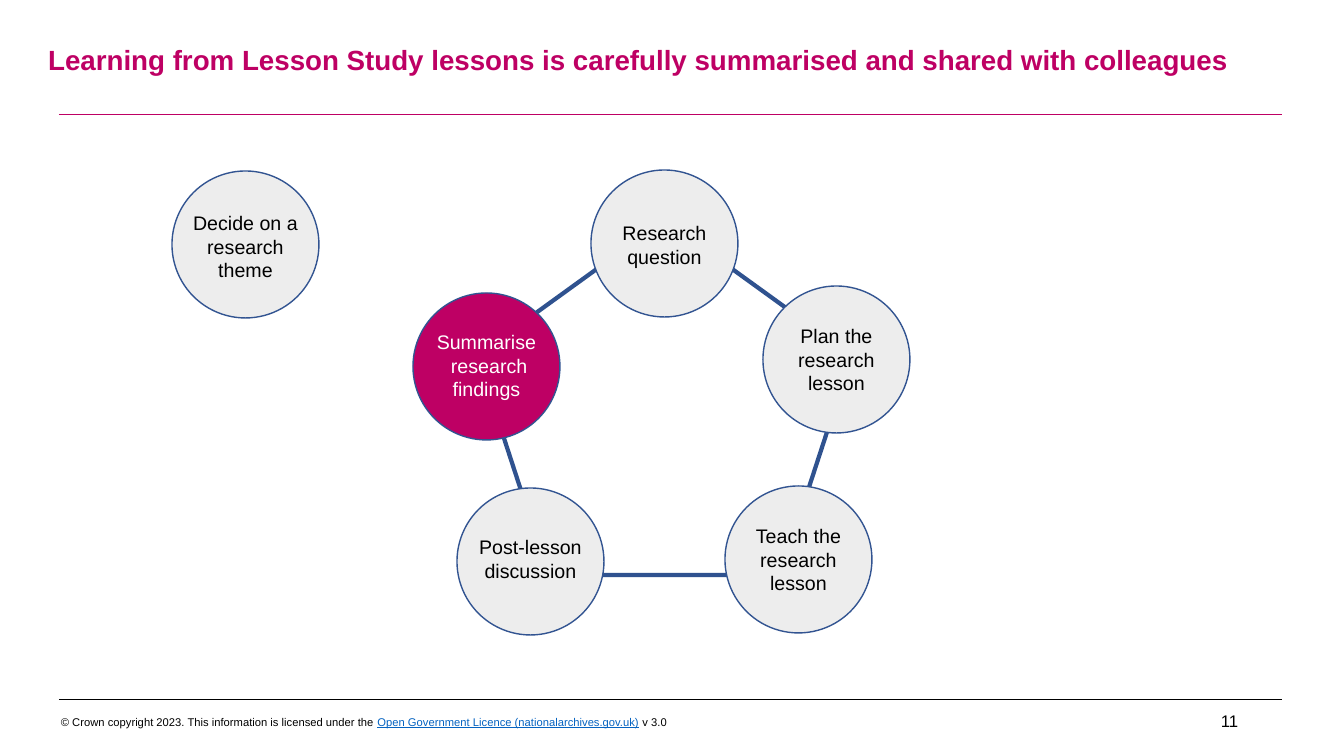
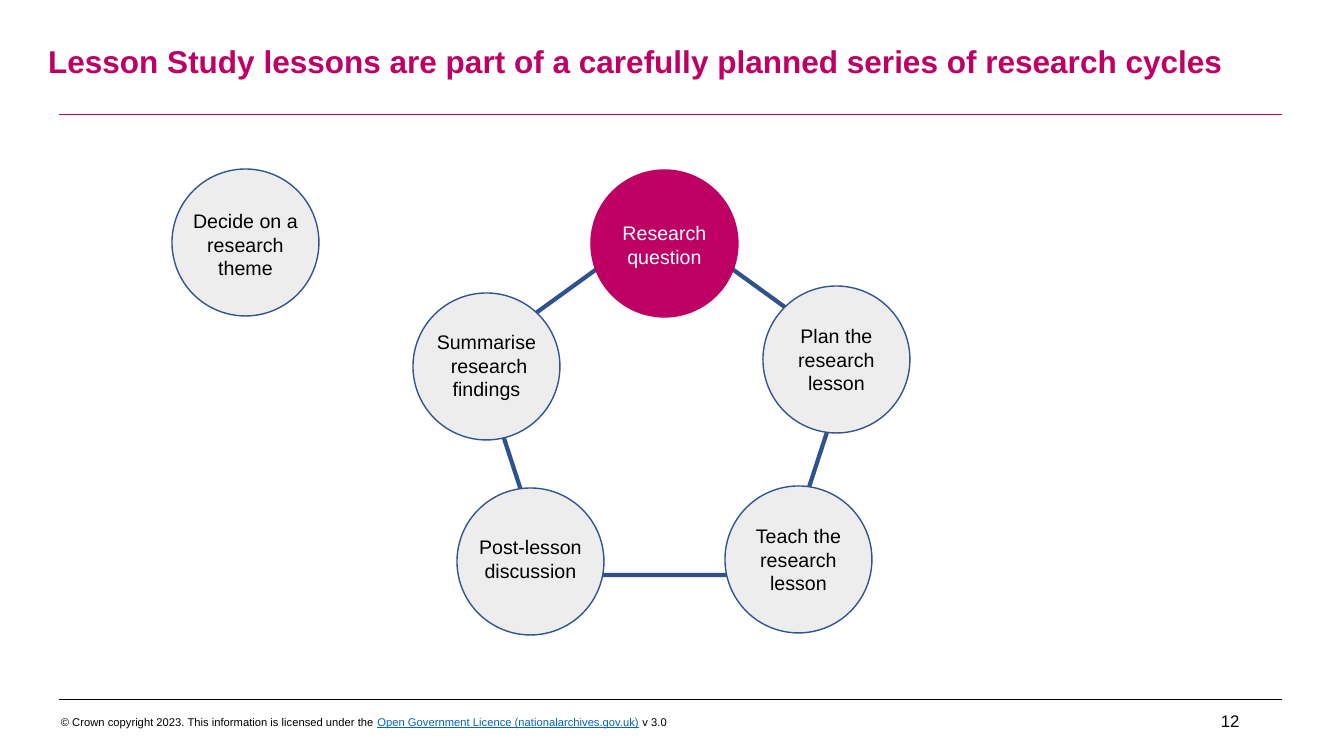
from lxml import etree
from pptx import Presentation
from pptx.dml.color import RGBColor
from pptx.enum.shapes import MSO_CONNECTOR, MSO_SHAPE
from pptx.enum.text import MSO_ANCHOR, MSO_AUTO_SIZE, PP_ALIGN
from pptx.oxml.ns import qn
from pptx.util import Pt

STRAIGHT = MSO_CONNECTOR.STRAIGHT
OVAL, PENTAGON = MSO_SHAPE.OVAL, MSO_SHAPE.REGULAR_PENTAGON
TOP, MIDDLE = MSO_ANCHOR.TOP, MSO_ANCHOR.MIDDLE
LEFT, CENTER = PP_ALIGN.LEFT, PP_ALIGN.CENTER
NO_AUTOFIT = MSO_AUTO_SIZE.NONE

MAGENTA = RGBColor(0xBE, 0x00, 0x64)
BLACK = RGBColor(0x00, 0x00, 0x00)
WHITE = RGBColor(0xFF, 0xFF, 0xFF)
GREY = RGBColor(0xED, 0xED, 0xED)
OUTLINE = RGBColor(0x32, 0x54, 0x91)
NAVY = RGBColor(0x2F, 0x52, 0x8F)
LINK = RGBColor(0x05, 0x63, 0xC1)

FONT = "Arial"
EMU_PER_PX = 914400 / 100.8
SLIDE_SIZE = (1344, 756)
TITLE_BOX = (38, 44, 1240, 67)
FOOTER_BOX = (51, 707, 848, 30)
NUMBER_BOX = (1211, 706, 58, 30)
RULE_SPAN = (59, 1282)
RULES = [(115, MAGENTA), (700, BLACK)]
CYCLE_BOX = (413, 169, 498, 467)
RING_BOX = (64, 51, 375, 355)
CIRCLE = 147
THEME_X = 172
THEME = "Decide on a research theme"

STAGES = [
    ("Research question", 178, 1, 1),
    ("Plan the research lesson", 350, 117, 0),
    ("Teach the research lesson", 312, 317, 0),
    ("Post-lesson discussion", 44, 319, -3),
    ("Summarise\n research findings", 0, 124, -1),
]

LICENCE = [
    ("© Crown copyright 2023. This information is licensed under the\u00a0", {}),
    ("Open Government Licence (nationalarchives.gov.uk)",
     {"color": LINK, "underline": True}),
    ("\u00a0v 3.0", {}),
]

SLIDES = [
    dict(title="Learning from Lesson Study lessons is carefully summarised "
               "and shared with colleagues",
         size=19.8, number=11, current=4, edge=OUTLINE, theme_y=171),
    dict(title="Lesson Study lessons are part of a carefully planned series "
               "of research cycles",
         size=22.5, number=12, current=0, edge=MAGENTA, theme_y=169),
]


def px(*lengths):
    return [round(n * EMU_PER_PX) for n in lengths]


def set_font(font, size, color=BLACK, **values):
    font.color.rgb = color
    for name, value in {"name": FONT, "size": Pt(size), **values}.items():
        setattr(font, name, value)


def set_frame(tf, anchor):
    values = {"word_wrap": True, "auto_size": NO_AUTOFIT,
              "vertical_anchor": anchor}
    for name, value in values.items():
        setattr(tf, name, value)


def add_text(shapes, box, text, size, color=BLACK, align=LEFT, anchor=TOP):
    tf = shapes.add_textbox(*px(*box)).text_frame
    set_frame(tf, anchor)
    tf.text = text
    for p in tf.paragraphs:
        p.alignment = align
        for r in p.runs:
            set_font(r.font, size, color)
    return tf


def add_outlined(shapes, kind, box, fill, line, width):
    sp = shapes.add_shape(kind, *px(*box))
    sp.shadow.inherit = False
    if fill is None:
        sp.fill.background()
    else:
        sp.fill.solid()
        sp.fill.fore_color.rgb = fill
    sp.line.color.rgb = line
    sp.line.width = Pt(width)


def add_rules(shapes):
    left, right = RULE_SPAN
    for y, color in RULES:
        line = shapes.add_connector(STRAIGHT, *px(left, y, right, y))
        line.line.color.rgb = color
        line.line.width = Pt(0.75)
        etree.SubElement(line._element.spPr, qn("a:effectLst"))


def add_title(slide, box, text, size):
    sp = slide.shapes.title
    sp.left, sp.top, sp.width, sp.height = px(*box)
    tf = sp.text_frame
    set_frame(tf, TOP)
    tf.text = text
    p = tf.paragraphs[0]
    p.alignment = LEFT
    p.line_spacing = 0.8
    set_font(p.runs[0].font, size, MAGENTA, bold=True)


def add_footer(shapes, number):
    p = add_text(shapes, FOOTER_BOX, "", 8, anchor=MIDDLE).paragraphs[0]
    for text, values in LICENCE:
        r = p.add_run()
        r.text = text
        set_font(r.font, 8, **values)
    add_text(shapes, NUMBER_BOX, str(number), 12)


def add_stage(shapes, left, top, text, nudge, current=False, edge=OUTLINE):
    fill, color = (MAGENTA, WHITE) if current else (GREY, BLACK)
    add_outlined(shapes, OVAL, (left, top, CIRCLE, CIRCLE), fill, edge, 1)
    add_text(shapes, (left, top + nudge, CIRCLE, CIRCLE), text, 14, color,
             CENTER, MIDDLE)


def add_cycle(shapes, box, current, edge):
    left, top = box[:2]
    x, y, w, h = RING_BOX
    group = shapes.add_group_shape().shapes
    add_outlined(group, PENTAGON, (left + x, top + y, w, h), None, NAVY, 3)
    for i, (text, x, y, nudge) in enumerate(STAGES):
        chosen = i == current
        add_stage(group, left + x, top + y, text, nudge, chosen,
                  edge if chosen else OUTLINE)


def build_slide(prs, title, size, number, current, edge, theme_y):
    slide = prs.slides.add_slide(prs.slide_layouts[5])
    add_rules(slide.shapes)
    add_title(slide, TITLE_BOX, title, size)
    add_cycle(slide.shapes, CYCLE_BOX, current, edge)
    add_stage(slide.shapes.add_group_shape().shapes, THEME_X, theme_y, THEME, 2)
    add_footer(slide.shapes, number)


def main():
    prs = Presentation()
    prs.slide_width, prs.slide_height = px(*SLIDE_SIZE)
    for content in SLIDES:
        build_slide(prs, **content)
    prs.save("out.pptx")


if __name__ == "__main__":
    main()
